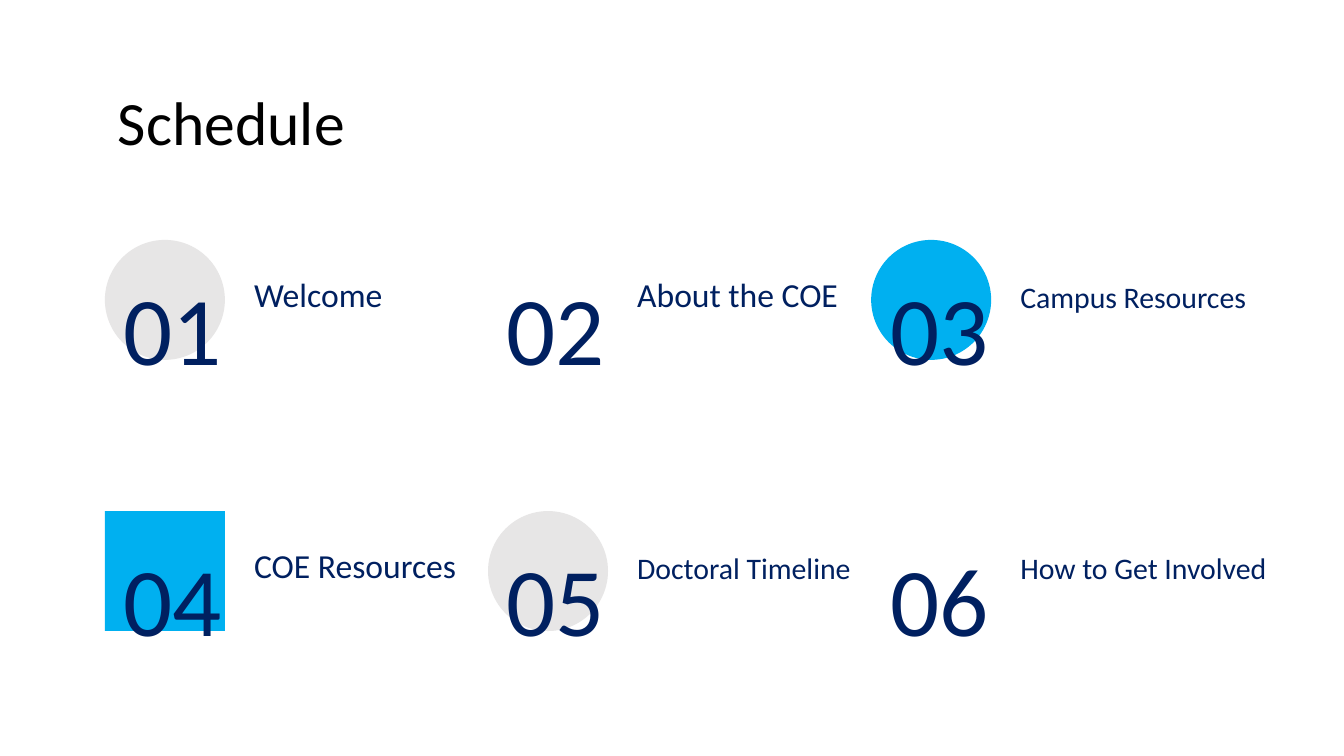
import pptx
import pptx.dml.color
import pptx.enum.shapes
import pptx.enum.text
import pptx.util

Inches = pptx.util.Inches
Shape = pptx.enum.shapes.MSO_SHAPE
Anchor = pptx.enum.text.MSO_ANCHOR
Align = pptx.enum.text.PP_ALIGN

FONT, NAVY, BLUE, GRAY = "Calibri", "002060", "00B0F0", "E7E6E6"
COLUMNS = 3

# Label, label size, label width, marker (shape and fill, or none)
SCHEDULE = [
    ("Welcome", 24, 2.46, (Shape.OVAL, GRAY)),
    ("About the COE", 24, 2.46, None),
    ("Campus Resources", 21.3, 2.7, (Shape.OVAL, BLUE)),
    ("COE Resources", 24, 2.46, (Shape.RECTANGLE, BLUE)),
    ("Doctoral Timeline", 21.3, 2.86, (Shape.OVAL, GRAY)),
    ("How to Get Involved", 21.3, 2.93, None),
]


def color(value):
    return pptx.dml.color.RGBColor.from_string(value)


def add_text(page, text, box, size, fill, anchor, align=Align.LEFT):
    frame = page.shapes.add_textbox(*map(Inches, box)).text_frame
    margin = Inches(0.13)
    frame_format = {"word_wrap": True, "vertical_anchor": anchor,
                    "margin_left": margin, "margin_right": margin,
                    "margin_top": margin, "margin_bottom": margin}
    for name, value in frame_format.items():
        setattr(frame, name, value)
    para = frame.paragraphs[0]
    para.alignment = align
    para.line_spacing = 0.9
    span = para.add_run()
    span.text = text
    for name, value in {"name": FONT, "size": pptx.util.Pt(size)}.items():
        setattr(span.font, name, value)
    span.font.color.rgb = color(fill)


def add_marker(page, kind, fill, left, top):
    side = 1.19
    marker = page.shapes.add_shape(kind, *map(Inches, (left, top, side, side)))
    marker.shadow.inherit = False
    marker.fill.solid()
    marker.fill.fore_color.rgb = color(fill)
    marker.line.fill.background()


def add_item(page, number, item, left, top):
    label, size, width, marker = item
    number_width, text_top = 1.35, top + 0.23
    if marker:
        add_marker(page, *marker, left, top)
    add_text(page, f"{number:02}", (left, text_top, number_width, 1.41),
             69.3, NAVY, Anchor.MIDDLE, Align.CENTER)
    add_text(page, label, (left + number_width, text_top, width, 0.64),
             size, NAVY, Anchor.BOTTOM)


def add_schedule(page, left, top, column_step, row_step):
    for index, item in enumerate(SCHEDULE):
        row, column = divmod(index, COLUMNS)
        add_item(page, index + 1, item,
                 left + column * column_step, top + row * row_step)


def main():
    deck = pptx.Presentation()
    deck.slide_width, deck.slide_height = Inches(13.33), Inches(7.5)
    page = deck.slides.add_slide(deck.slide_layouts[6])

    # Heading
    add_text(page, "Schedule", (1.04, 0.79, 11.25, 0.84),
             44, "000000", Anchor.TOP)

    # Numbered grid
    add_schedule(page, 1.04, 2.38, 3.8, 2.69)

    deck.save("out.pptx")


if __name__ == "__main__":
    main()
